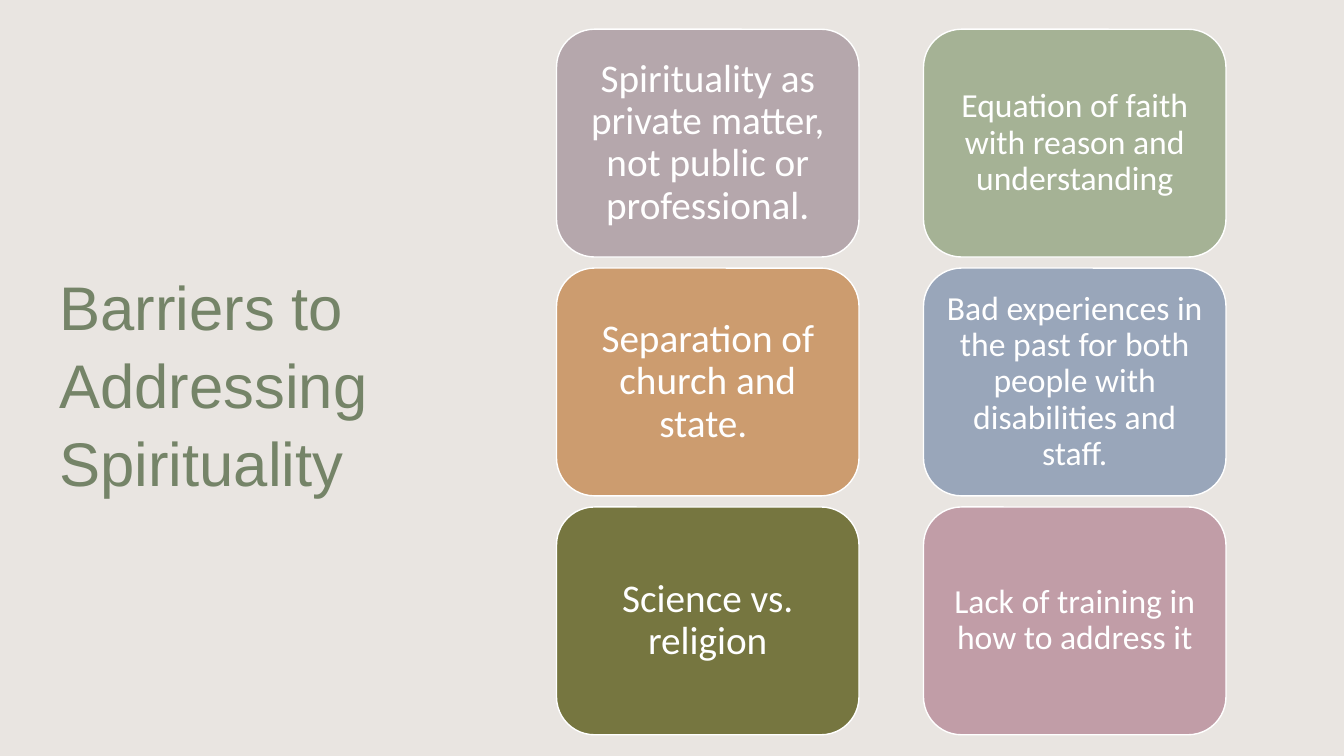
from pptx import Presentation
from pptx.dml.color import RGBColor
from pptx.enum.shapes import MSO_SHAPE
from pptx.enum.text import MSO_ANCHOR, PP_ALIGN
from pptx.util import Inches, Pt

ROUNDED = MSO_SHAPE.ROUNDED_RECTANGLE
MIDDLE = MSO_ANCHOR.MIDDLE
LEFT, CENTER = PP_ALIGN.LEFT, PP_ALIGN.CENTER

BACKGROUND, TITLE_COLOR, WHITE = "E9E5E1", "758468", "FFFFFF"

# Card grid, in inches
GRID_LEFT, GRID_TOP = 5.52, 0.29
CARD_WIDTH, CARD_HEIGHT = 3, 2.26
COLUMN_STEP, ROW_STEP = 3.64, 2.37

# Each column: text size, side margin, top margin, cards
COLUMNS = [
    (28, 0.12, 0.06, [
        ("Spirituality as private matter, not public or professional.", "B5A7AC"),
        ("Separation of church and state. ", "CC9C6F"),
        ("Science vs. religion", "767640"),
    ]),
    (24, 0.1, 0.05, [
        ("Equation of faith with reason and understanding", "A5B295"),
        ("Bad experiences in the past for both people with disabilities and staff.",
         "99A6BA"),
        ("Lack of training in how to address it", "C19DA7"),
    ]),
]


def paint(color_format, color):
    color_format.rgb = RGBColor.from_string(color)


def write_text(shape, text, font_name, size, color, alignment, line_spacing,
               side_margin, top_margin):
    text_frame = shape.text_frame
    text_frame.text = text
    text_frame.word_wrap = True
    text_frame.vertical_anchor = MIDDLE
    text_frame.margin_left = text_frame.margin_right = Inches(side_margin)
    text_frame.margin_top = text_frame.margin_bottom = Inches(top_margin)
    paragraph = text_frame.paragraphs[0]
    paragraph.alignment = alignment
    paragraph.line_spacing = line_spacing
    font = paragraph.runs[0].font
    font.name = font_name
    font.size = Pt(size)
    paint(font.color, color)


def add_title(slide, text):
    box = slide.shapes.add_textbox(
        Inches(0.49), Inches(0.78), Inches(3.4), Inches(6.02))
    write_text(box, text, "Arial", 44, TITLE_COLOR, LEFT, 1.05, 0.1, 0.05)


def add_card(slide, left, top, text, fill_color, size, side_margin, top_margin):
    card = slide.shapes.add_shape(
        ROUNDED, Inches(left), Inches(top), Inches(CARD_WIDTH), Inches(CARD_HEIGHT))
    card.shadow.inherit = False
    card.fill.solid()
    paint(card.fill.fore_color, fill_color)
    paint(card.line.color, WHITE)
    card.line.width = Pt(1)
    write_text(card, text, "Calibri", size, WHITE, CENTER, 0.9,
               side_margin, top_margin)


def main():
    presentation = Presentation()
    presentation.slide_width = Inches(13.33)
    presentation.slide_height = Inches(7.5)
    slide = presentation.slides.add_slide(presentation.slide_layouts[6])

    # Background
    background_fill = slide.background.fill
    background_fill.solid()
    paint(background_fill.fore_color, BACKGROUND)

    # Title
    add_title(slide, "Barriers to Addressing Spirituality")

    # Barrier cards, column by column
    for column, (size, side_margin, top_margin, cards) in enumerate(COLUMNS):
        for row, (text, color) in enumerate(cards):
            add_card(slide, GRID_LEFT + column * COLUMN_STEP,
                     GRID_TOP + row * ROW_STEP, text, color, size,
                     side_margin, top_margin)

    presentation.save("out.pptx")


if __name__ == "__main__":
    main()
